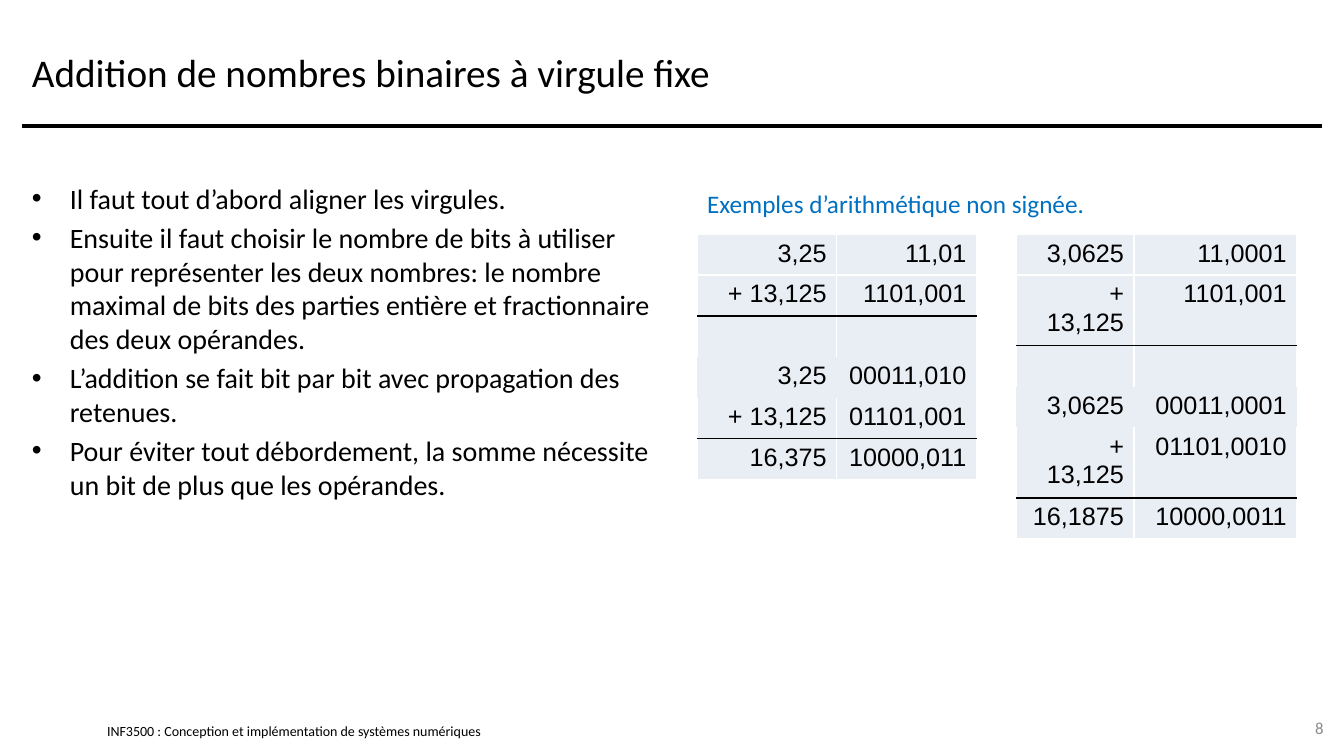
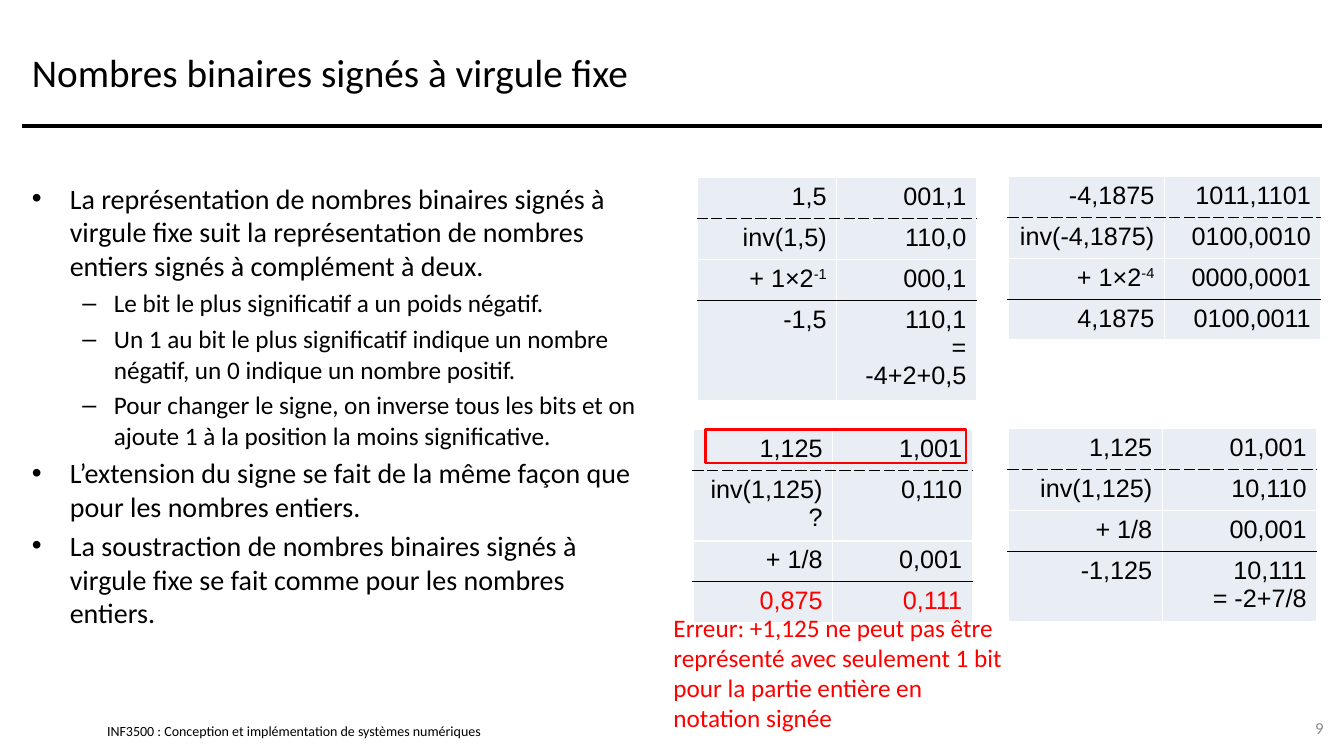
"""Build two slides on fixed-point binary arithmetic."""
from itertools import zip_longest

from lxml.etree import SubElement as Sub
from pptx import Presentation
from pptx.dml.color import RGBColor as Rgb
from pptx.enum.shapes import MSO_CONNECTOR as Link, MSO_SHAPE as Shape
from pptx.enum.text import MSO_ANCHOR as Anchor, PP_ALIGN as Align
from pptx.oxml.ns import qn
from pptx.util import Pt

PX = 9525
COLORS = {"black": "000000", "white": "FFFFFF", "cell": "E9EDF4",
          "blue": "0070C0", "red": "FF0000", "gray": "8C8C8C"}
LEVELS = {"•": (36, 36, 20), "–": (78, 30, 18)}
EDGES = {"w": ("white", "solid"), "k": ("black", "solid"),
         "d": ("black", "lgDash")}
FOOTER = "INF3500 : Conception et implémentation de systèmes numériques"
BODY = (21, 168, 608, 488)
ROW = 39

RULES = """Il faut tout d’abord aligner les virgules.
Ensuite il faut choisir le nombre de bits à utiliser pour représenter les deux \
nombres: le nombre maximal de bits des parties entière et fractionnaire des \
deux opérandes.
L’addition se fait bit par bit avec propagation des retenues.
Pour éviter tout débordement, la somme nécessite un bit de plus que les \
opérandes."""
SIGNS = """La représentation de nombres binaires signés à virgule fixe suit la \
représentation de nombres entiers signés à complément à deux.
Le bit le plus significatif a un poids négatif.
Un 1 au bit le plus significatif indique un nombre négatif, un 0 indique un \
nombre positif.
Pour changer le signe, on inverse tous les bits et on ajoute 1 à la position \
la moins significative.
L’extension du signe se fait de la même façon que pour les nombres entiers.
La soustraction de nombres binaires signés à virgule fixe se fait comme pour \
les nombres entiers."""
ERROR = ("Erreur: +1,125 ne peut pas être représenté avec seulement 1 bit "
         "pour la partie entière en notation signée")

SUMS = [
    ((664, 223), (133, 133),
     [("3,25", "11,01"), ("+ 13,125", "1101,001"), ("", ""),
      ("3,25", "00011,010"), ("+ 13,125", "01101,001"),
      ("16,375", "10000,011")]),
    ((968, 223), (112, 155),
     [("3,0625", "11,0001"), ("+ 13,125", "1101,001"), ("", ""),
      ("3,0625", "00011,0001"), ("+ 13,125", "01101,0010"),
      ("16,1875", "10000,0011")]),
]
FLIPS = [
    ((664, 169), (133, 133),
     [("1,5", "001,1"), ("inv(1,5)", "110,0"), ("+ 1×2^-1", "000,1"),
      ("-1,5", "110,1\n= -4+2+0,5")], "black"),
    ((960, 168), (149, 149),
     [("-4,1875", "1011,1101"), ("inv(-4,1875)", "0100,0010"),
      ("+ 1×2^-4", "0000,0001"), ("4,1875", "0100,0011")], "black"),
    ((660, 409), (133, 133),
     [("1,125", "1,001"), ("inv(1,125)?", "0,110"), ("+ 1/8", "0,001"),
      ("0,875", "0,111")], "red"),
    ((960, 408), (147, 147),
     [("1,125", "01,001"), ("inv(1,125)", "10,110"), ("+ 1/8", "00,001"),
      ("-1,125", "10,111\n= -2+7/8")], "black"),
]


def px(*nums):
    """Turn px lengths into EMU."""
    return [num * PX for num in nums]


def rgb(name):
    """Look up a named colour."""
    return Rgb.from_string(COLORS[name])


def bullet(para, mark, first):
    """Give a paragraph its mark, indent and gap."""
    left, hang, size = LEVELS[mark]
    props = para._p.get_or_add_pPr()
    props.set("marL", str(left * PX))
    props.set("indent", str(-hang * PX))
    Sub(props, qn("a:buFont"), typeface="Arial")
    Sub(props, qn("a:buChar"), char=mark)
    if not first:
        para.space_before = Pt(4)
    return size


def write(frame, words, size=18, color="black", font="Calibri",
          align=Align.LEFT, marks=""):
    """Fill a frame, one paragraph a line, with ^ before a superscript."""
    for num, (line, mark) in enumerate(zip_longest(words.split("\n"), marks)):
        para = frame.add_paragraph() if num else frame.paragraphs[0]
        para.alignment = align
        if mark:
            size = bullet(para, mark, num == 0)
        for high, part in enumerate(line.split("^")):
            if not part:
                continue
            run = para.add_run()
            run.text = part
            run.font.size = Pt(size)
            run.font.name = font
            run.font.color.rgb = rgb(color)
            if high:
                run._r.get_or_add_rPr().set("baseline", "30000")


def box(slide, at, words, anchor=Anchor.TOP, inset=True, **fmt):
    """Add a wrapped text box."""
    frame = slide.shapes.add_textbox(*px(*at)).text_frame
    frame.word_wrap = True
    frame.vertical_anchor = anchor
    if not inset:
        frame.margin_left = frame.margin_right = 0
        frame.margin_top = frame.margin_bottom = 0
    write(frame, words, **fmt)


def border(cell, side, edge):
    """Draw one side of a cell, or clear it."""
    line = Sub(cell._tc.get_or_add_tcPr(), qn("a:ln" + side), w=str(Pt(1)))
    if edge not in EDGES:
        Sub(line, qn("a:noFill"))
        return
    color, dash = EDGES[edge]
    fill = Sub(line, qn("a:solidFill"))
    Sub(fill, qn("a:srgbClr"), val=COLORS[color])
    Sub(line, qn("a:prstDash"), val=dash)


def grid(slide, spot, cols, rows, edges, last="black"):
    """Add a table whose edges string lists the rules from top to bottom."""
    size = (sum(cols), ROW * len(rows))
    table = slide.shapes.add_table(len(rows), len(cols),
                                   *px(*spot, *size)).table
    table.first_row = table.horz_banding = False
    for col, wide in zip(table.columns, px(*cols)):
        col.width = wide
    for num, row in enumerate(rows):
        table.rows[num].height = ROW * PX
        top, base = edges[num:num + 2]
        flank = "-" if top == base == "-" else "w"
        color = last if num == len(rows) - 1 else "black"
        for cell, words in zip(table.rows[num].cells, row):
            for side, edge in zip("LRTB", (flank, flank, top, base)):
                border(cell, side, edge)
            cell.fill.solid()
            cell.fill.fore_color.rgb = rgb("cell")
            write(cell.text_frame, words, color=color, font="Arial",
                  align=Align.RIGHT)


def rule(slide):
    """Draw the line under the title."""
    line = slide.shapes.add_connector(Link.STRAIGHT, *px(21, 120, 1259, 120))
    line.line.color.rgb = rgb("black")
    line.line.width = Pt(3)
    Sub(line._element.spPr, qn("a:effectLst"))


def frame_red(slide, at):
    """Outline a region in red."""
    rect = slide.shapes.add_shape(Shape.RECTANGLE, *px(*at))
    rect.shadow.inherit = False
    rect.fill.background()
    rect.line.color.rgb = rgb("red")
    rect.line.width = Pt(2)


def page(deck, title, num, body, marks):
    """Add a slide with its title, footer, number and bullets."""
    slide = deck.slides.add_slide(deck.slide_layouts[6])
    box(slide, (102, 688, 491, 16), FOOTER, Anchor.MIDDLE, inset=False,
        size=10)
    rule(slide)
    box(slide, (21, 16, 1237, 104), title, Anchor.MIDDLE, size=28)
    box(slide, BODY, body, marks=marks)
    box(slide, (1206, 674, 64, 38), str(num), Anchor.MIDDLE, size=12,
        color="gray", align=Align.RIGHT)
    return slide


def main():
    """Build and save the deck."""
    deck = Presentation()
    deck.slide_width, deck.slide_height = px(1280, 720)

    slide = page(deck, "Addition de nombres binaires à virgule fixe", 8,
                 RULES, "••••")
    for spot, cols, rows in SUMS:
        grid(slide, spot, cols, rows, "wwk--kw")
    box(slide, (664, 175, 408, 38), "Exemples d’arithmétique non signée.",
        color="blue")

    slide = page(deck, "Nombres binaires signés à virgule fixe", 9,
                 SIGNS, "•–––••")
    for spot, cols, rows, last in FLIPS:
        grid(slide, spot, cols, rows, "wdwkw", last)
    frame_red(slide, (672, 409, 248, 32))
    box(slide, (632, 578, 344, 126), ERROR, color="red")

    deck.save("out.pptx")


if __name__ == "__main__":
    main()
